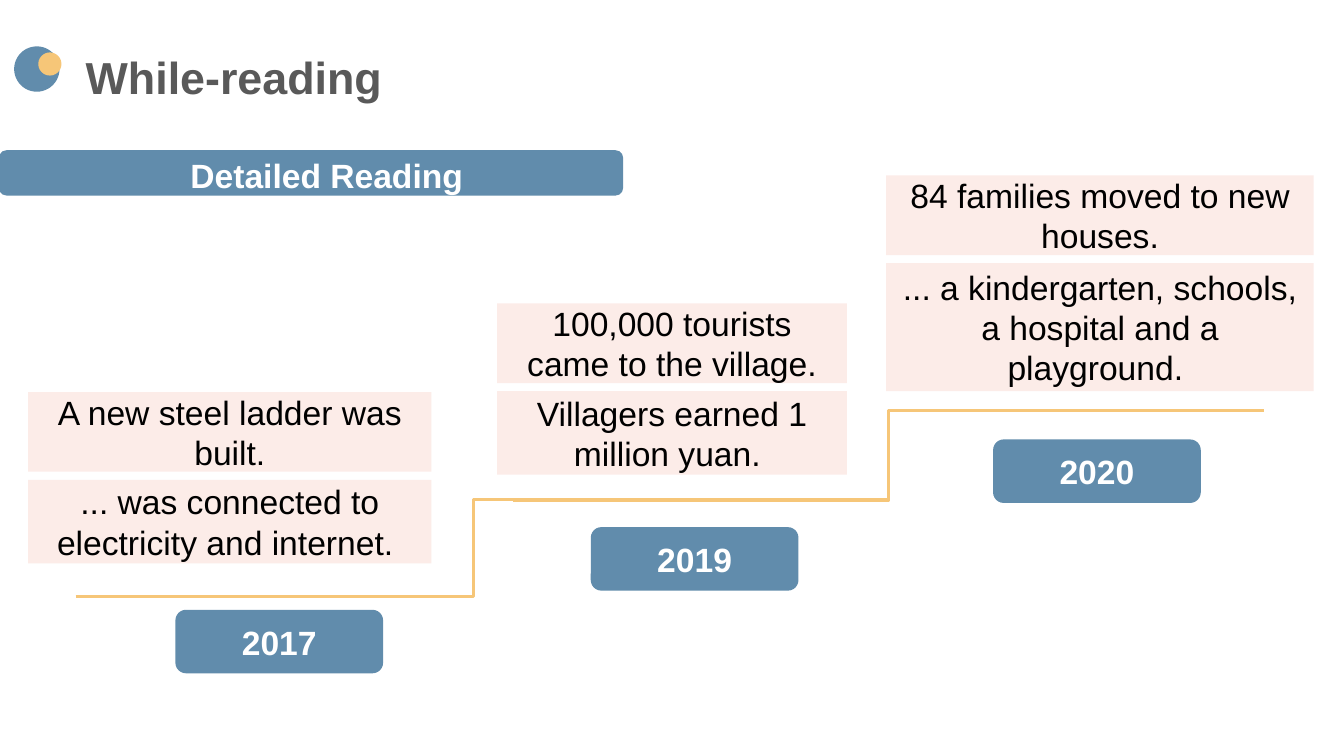
from lxml.etree import SubElement
from pptx import Presentation
from pptx.dml.color import RGBColor
from pptx.enum.shapes import MSO_CONNECTOR, MSO_SHAPE
from pptx.enum.text import MSO_ANCHOR, PP_ALIGN
from pptx.oxml.ns import qn
from pptx.util import Emu, Pt

PX = 9144  # 100 px to the inch
BLUE, GOLD, PINK = "618CAC", "F6C678", "FCECE8"
WHITE, GREY, BLACK = "FFFFFF", "595959", "000000"

YEAR_W, YEAR_H = 206, 63
FACT_GAP = 8
# year, left and top of its label; left, top and width of its facts; (height, text) of each fact
STAGES = [
    ("2017", (174, 605), (28, 389, 400),
     [(79, "A new steel ladder was built."),
      (83, "... was connected to electricity and internet. ")]),
    ("2019", (586, 523), (493, 301, 347),
     [(79, "100,000 tourists came to the village."),
      (83, "Villagers earned 1 million yuan. ")]),
    ("2020", (985, 436), (879, 174, 424),
     [(79, "84 families moved to new houses."),
      (127, "... a kindergarten, schools, a hospital and a playground. ")]),
]
STEPS = [(75, 592, 865, 496), (509, 496, 1254, 407)]


def px(*lengths):
    return [Emu(n * PX) for n in lengths]


def rgb(color):
    return RGBColor.from_string(color)


def write(tf, text, color, size=24, bold=False, align=PP_ALIGN.CENTER,
          anchor=MSO_ANCHOR.MIDDLE):
    tf.word_wrap = True
    tf.vertical_anchor = anchor
    p = tf.paragraphs[0]
    p.alignment = align
    r = p.add_run()
    r.text = text
    r.font.name = "Arial"
    r.font.size = Pt(size)
    r.font.bold = bold
    r.font.color.rgb = rgb(color)
    return p


def add_block(s, kind, box, fill):
    sp = s.shapes.add_shape(kind, *px(*box))
    sp.shadow.inherit = False
    sp.fill.solid()
    sp.fill.fore_color.rgb = rgb(fill)
    sp.line.fill.background()
    return sp


def add_heading(s, x, y):
    """Title with the two overlapping dots to its left."""
    title = s.shapes.title
    title.left, title.top, title.width, title.height = px(x + 61, y - 2, 345, 64)
    write(title.text_frame, "While-reading", GREY, 32, True,
          PP_ALIGN.LEFT, MSO_ANCHOR.TOP)
    add_block(s, MSO_SHAPE.OVAL, (x, y, 45, 45), BLUE)
    add_block(s, MSO_SHAPE.OVAL, (x + 24, y + 6, 23, 23), GOLD)


def add_banner(s, x, y, w, h):
    add_block(s, MSO_SHAPE.ROUNDED_RECTANGLE, (x, y, w, h), BLUE)
    label = s.shapes.add_textbox(*px(x + 31, y - 8, w - 31, 79))
    p = write(label.text_frame, "Detailed Reading", WHITE, bold=True,
              anchor=MSO_ANCHOR.TOP)
    p.line_spacing = 1.2


def add_step(s, *ends):
    line = s.shapes.add_connector(MSO_CONNECTOR.ELBOW, *px(*ends))
    line.line.color.rgb = rgb(GOLD)
    line.line.width = Pt(2.25)
    SubElement(line._element.spPr, qn("a:effectLst"))


def add_year(s, x, y, year):
    sp = add_block(s, MSO_SHAPE.ROUNDED_RECTANGLE, (x, y, YEAR_W, YEAR_H), BLUE)
    write(sp.text_frame, year, WHITE, bold=True)


def add_facts(s, x, y, w, facts):
    for h, text in facts:
        sp = add_block(s, MSO_SHAPE.RECTANGLE, (x, y, w, h), PINK)
        write(sp.text_frame, text, BLACK)
        y += h + FACT_GAP


def main():
    prs = Presentation()
    prs.slide_width, prs.slide_height = px(1333, 750)
    s = prs.slides.add_slide(prs.slide_layouts[5])
    add_heading(s, 14, 46)
    add_banner(s, -1, 149, 619, 45)
    for step in STEPS:
        add_step(s, *step)
    for year, label_at, facts_at, facts in STAGES:
        add_year(s, *label_at, year)
        add_facts(s, *facts_at, facts)
    prs.save("out.pptx")


if __name__ == "__main__":
    main()
